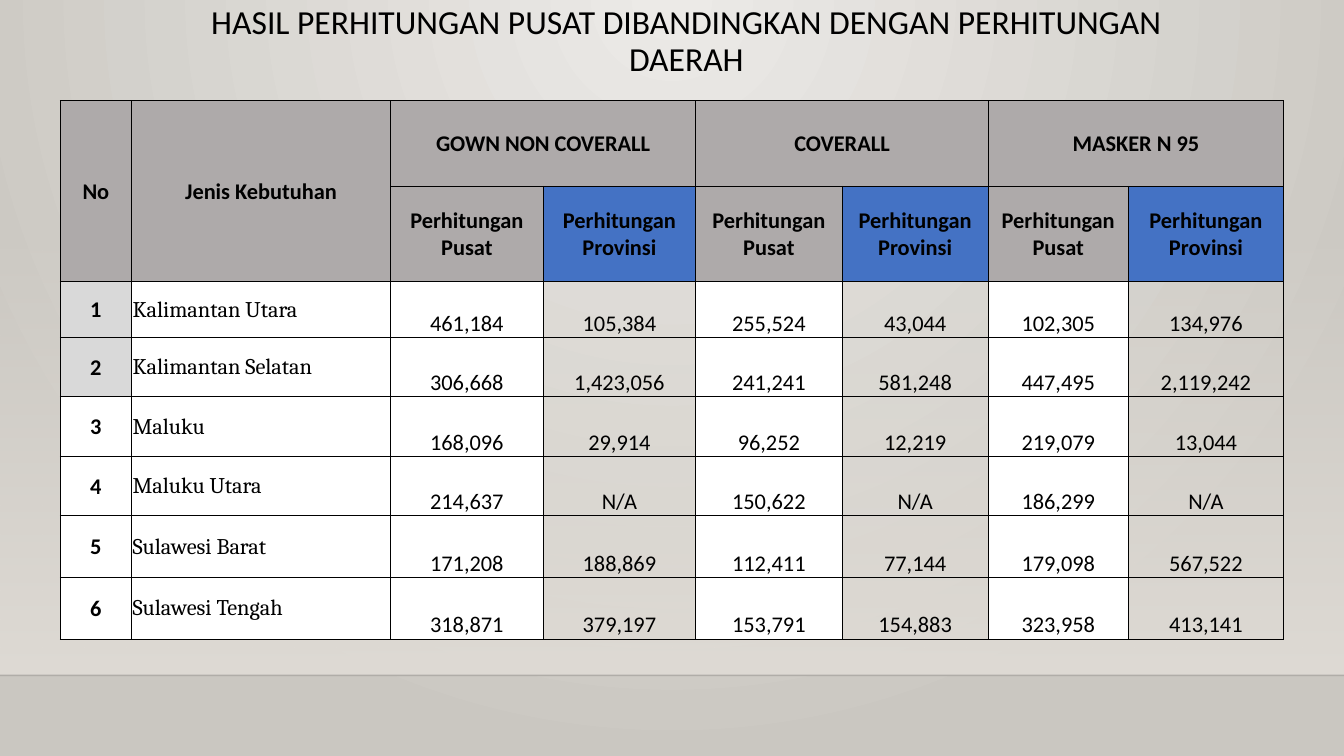
from dataclasses import dataclass

from lxml import etree
from pptx import Presentation
from pptx.dml.color import RGBColor
from pptx.enum import shapes, text
from pptx.oxml import ns
from pptx.util import Pt


@dataclass(frozen=True)
class Theme:
    body_font: str = "Calibri"
    region_font: str = "Cambria"
    title_size: float = 24
    table_size: float = 16
    ink: str = "000000"
    glow: str = "ECEAE7"
    edge: str = "CAC7C1"
    wall: str = "DFDBD5"
    header: str = "AEAAAA"
    province: str = "4472C4"
    marked: str = "D9D9D9"
    white: str = "FFFFFF"


THEME = Theme()
WIDTH, HEIGHT = 960, 540
FLOOR_TOP = 482.4
COLUMNS = [51, 185, 109, 109, 104.5, 104.5, 100, 111]
ROWS = [61, 68, 40, 42.5, 42.5, 42.5, 44, 44]
ITEMS = ["GOWN NON COVERALL", "COVERALL", "MASKER N 95"]
REGIONS = [
    ("Kalimantan Utara", "461,184", "105,384", "255,524", "43,044", "102,305", "134,976"),
    ("Kalimantan Selatan", "306,668", "1,423,056", "241,241", "581,248", "447,495", "2,119,242"),
    ("Maluku", "168,096", "29,914", "96,252", "12,219", "219,079", "13,044"),
    ("Maluku Utara", "214,637", "N/A", "150,622", "N/A", "186,299", "N/A"),
    ("Sulawesi Barat", "171,208", "188,869", "112,411", "77,144", "179,098", "567,522"),
    ("Sulawesi Tengah", "318,871", "379,197", "153,791", "154,883", "323,958", "413,141"),
]


def rgb(value):
    return RGBColor.from_string(value)


def add_element(parent, tag, **attributes):
    return etree.SubElement(parent, ns.qn(tag), {k: str(v) for k, v in attributes.items()})


def set_gradient(gradient, stops):
    """Replace the content of a gradFill by (position, colour, opacity) stops in percent."""
    for child in list(gradient):
        gradient.remove(child)
    stop_list = add_element(gradient, "a:gsLst")
    for position, color, opacity in stops:
        stop = add_element(stop_list, "a:gs", pos=position * 1000)
        color_element = add_element(stop, "a:srgbClr", val=color)
        add_element(color_element, "a:alpha", val=opacity * 1000)


def write(frame, content, size, font=THEME.body_font, bold=False,
          align=text.PP_ALIGN.CENTER):
    paragraph = frame.paragraphs[0]
    paragraph.alignment = align
    run = paragraph.add_run()
    run.text = content
    run.font.name = font
    run.font.size = Pt(size)
    run.font.bold = bold
    run.font.color.rgb = rgb(THEME.ink)
    return paragraph


def add_backdrop(slide):
    slide.background.fill.gradient()
    glow = slide.element.find(".//" + ns.qn("a:gradFill"))
    set_gradient(glow, [(0, THEME.glow, 100), (100, THEME.edge, 100)])
    circle = add_element(glow, "a:path", path="circle")
    add_element(circle, "a:fillToRect", l=43000, t=0, r=43000, b=100000)

    wall_top = 159
    wall = slide.shapes.add_shape(shapes.MSO_SHAPE.RECTANGLE, 0, Pt(wall_top),
                                  Pt(WIDTH), Pt(FLOOR_TOP - wall_top))
    wall.shadow.inherit = False
    wall.line.fill.background()
    wall.fill.gradient()
    fade = wall.element.spPr.find(ns.qn("a:gradFill"))
    set_gradient(fade, [(0, THEME.wall, 0), (100, THEME.wall, 100)])
    add_element(fade, "a:lin", ang=5400000, scaled=0)

    floor_line = slide.shapes.add_connector(shapes.MSO_CONNECTOR.STRAIGHT, 0, Pt(FLOOR_TOP),
                                            Pt(WIDTH), Pt(FLOOR_TOP))
    floor_line.line.width = Pt(1)
    floor_line.line.color.rgb = rgb(THEME.ink)
    properties = floor_line.element.spPr
    add_element(properties.find(".//" + ns.qn("a:srgbClr")), "a:alpha", val=20000)
    add_element(properties, "a:effectLst")


def add_title(slide, left, top, width, height):
    box = slide.shapes.add_textbox(Pt(left), Pt(top), Pt(width), Pt(height))
    frame = box.text_frame
    frame.word_wrap = True
    frame.vertical_anchor = text.MSO_ANCHOR.TOP
    paragraph = write(frame, "HASIL PERHITUNGAN PUSAT DIBANDINGKAN DENGAN PERHITUNGAN DAERAH",
                      THEME.title_size)
    paragraph.line_spacing = 0.9


def style_cell(cell, fill):
    """Give a cell thin borders, narrow margins and a fill (None for see-through)."""
    properties = cell._tc.get_or_add_tcPr()
    for side in ("a:lnL", "a:lnR", "a:lnT", "a:lnB"):
        border = add_element(properties, side, w=Pt(0.5))
        solid = add_element(border, "a:solidFill")
        add_element(solid, "a:srgbClr", val=THEME.ink)
    cell.margin_left = cell.margin_right = cell.margin_top = Pt(0.7)
    cell.margin_bottom = 0
    if fill:
        cell.fill.solid()
        cell.fill.fore_color.rgb = rgb(fill)
    else:
        cell.fill.background()


def fill_cell(cell, content, fill, anchor=text.MSO_ANCHOR.MIDDLE, **format_options):
    style_cell(cell, fill)
    cell.vertical_anchor = anchor
    if content:
        write(cell.text_frame, content, THEME.table_size, **format_options)


def add_comparison_table(slide, left, top):
    frame = slide.shapes.add_table(len(ROWS), len(COLUMNS), Pt(left), Pt(top),
                                   Pt(sum(COLUMNS)), Pt(sum(ROWS)))
    table = frame.table
    table.first_row = table.horz_banding = False
    for column, width in zip(table.columns, COLUMNS):
        column.width = Pt(width)
    for row, height in zip(table.rows, ROWS):
        row.height = Pt(height)

    for index, label in enumerate(["No", "Jenis Kebutuhan"]):
        fill_cell(table.cell(0, index), label, THEME.header, bold=True)
        fill_cell(table.cell(1, index), "", THEME.header)
        table.cell(0, index).merge(table.cell(1, index))
    for index, item in enumerate(ITEMS):
        first = 2 + 2 * index
        fill_cell(table.cell(0, first), item, THEME.header, bold=True)
        fill_cell(table.cell(0, first + 1), "", THEME.header)
        table.cell(0, first).merge(table.cell(0, first + 1))
        fill_cell(table.cell(1, first), "Perhitungan Pusat", THEME.header, bold=True)
        fill_cell(table.cell(1, first + 1), "Perhitungan Provinsi", THEME.province, bold=True)

    for number, (region, *values) in enumerate(REGIONS, start=1):
        row = number + 1
        fill_cell(table.cell(row, 0), str(number),
                  THEME.marked if number <= 2 else THEME.white, bold=True)
        fill_cell(table.cell(row, 1), region, THEME.white, font=THEME.region_font,
                  align=text.PP_ALIGN.LEFT)
        for index, value in enumerate(values):
            fill_cell(table.cell(row, 2 + index), value,
                      None if index % 2 else THEME.white, anchor=text.MSO_ANCHOR.BOTTOM)


def main():
    presentation = Presentation()
    presentation.slide_width, presentation.slide_height = Pt(WIDTH), Pt(HEIGHT)
    slide = presentation.slides.add_slide(presentation.slide_layouts[6])
    add_backdrop(slide)
    add_title(slide, 112.3, 0.7, 756, 83)
    add_comparison_table(slide, 43, 72)
    presentation.save("out.pptx")


if __name__ == "__main__":
    main()
